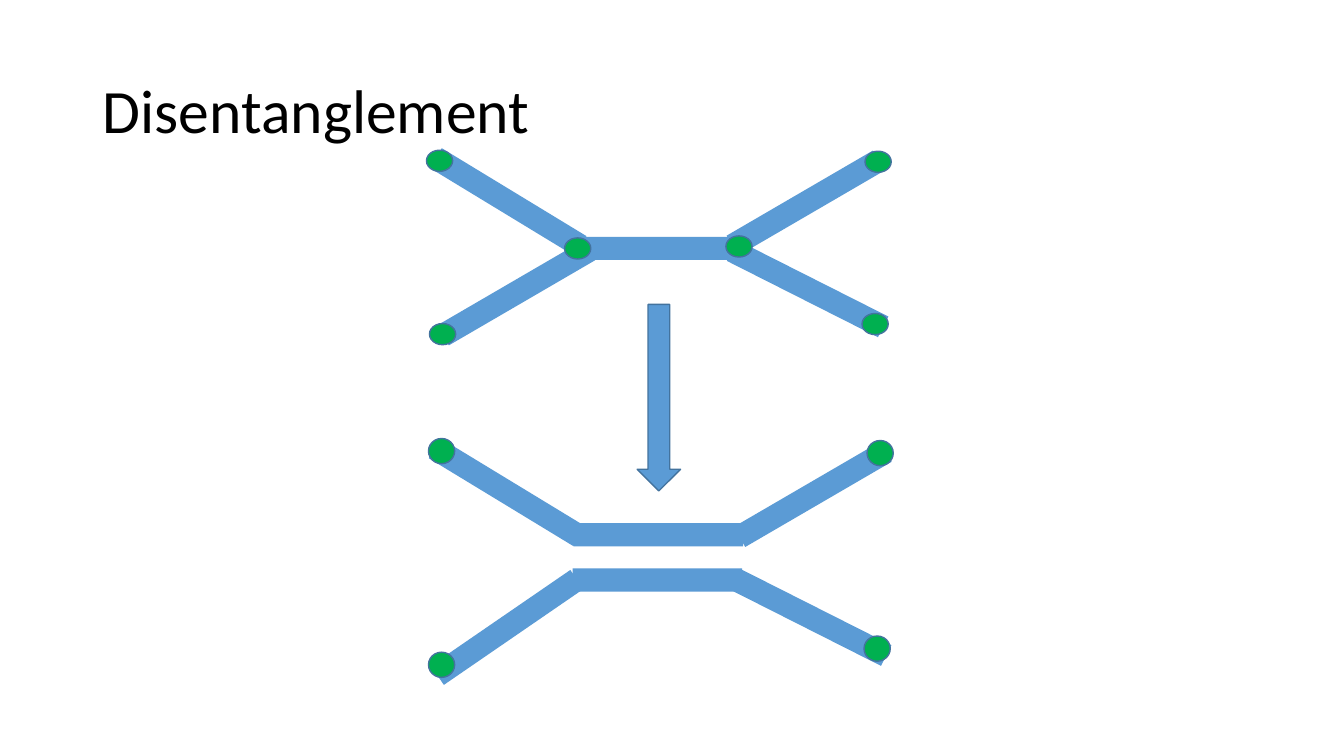
from pptx import Presentation
from pptx.dml.color import RGBColor
from pptx.enum.shapes import MSO_SHAPE
from pptx.enum.text import MSO_ANCHOR, PP_ALIGN
from pptx.util import Pt

PX = 9144  # EMU per px, 100 px to the inch
BLACK = RGBColor(0x00, 0x00, 0x00)
BLUE = RGBColor(0x5B, 0x9B, 0xD5)
GREEN = RGBColor(0x00, 0xB0, 0x50)
OUTLINE = RGBColor(0x43, 0x73, 0x9E)

BAR_W, BAR_H = 168, 23
NODE_W = 26
FLAT_NODE_H, ROUND_NODE_H = 21, 25

# Bars: left, top, rotation in degrees
ENTANGLED_BARS = [(570, 235, 0), (428, 279, 329.8), (717, 275, 26.8),
                  (420, 189, 31.3), (715, 190, 329.8)]
SEPARATE_BARS = [(569, 519, 0), (419, 611, 325.5), (720, 601, 26.8),
                 (419, 477, 31.3), (722, 479, 329.8), (568, 564, 0)]
# Nodes: left, top
JUNCTIONS = [(560, 236), (720, 234)]
ENTANGLED_ENDS = [(426, 321), (423, 149), (858, 150), (855, 311)]
SEPARATE_ENDS = [(425, 647), (425, 435), (860, 437), (857, 631)]


class Diagram:
    def __init__(self, prs):
        self.s = prs.slides.add_slide(prs.slide_layouts[5])

    def title(self, text, x, y, w, h):
        sp = self.s.shapes.title
        sp.left, sp.top, sp.width, sp.height = (v * PX for v in (x, y, w, h))
        tf = sp.text_frame
        tf.word_wrap = True
        tf.vertical_anchor = MSO_ANCHOR.MIDDLE
        p = tf.paragraphs[0]
        p.alignment = PP_ALIGN.LEFT
        p.line_spacing = 0.9
        r = p.add_run()
        r.text = text
        r.font.name = "Calibri"
        r.font.size = Pt(44)
        r.font.color.rgb = BLACK

    def shape(self, shapes, kind, x, y, w, h, fill, outlined=True):
        sp = shapes.add_shape(kind, x * PX, y * PX, w * PX, h * PX)
        sp.shadow.inherit = False
        sp.fill.solid()
        sp.fill.fore_color.rgb = fill
        if outlined:
            sp.line.color.rgb = OUTLINE
            sp.line.width = Pt(1)
        else:
            sp.line.fill.background()
        return sp

    def network(self, bars, nodes, node_h):
        """Group the bars with the nodes lying on top of them."""
        shapes = self.s.shapes.add_group_shape().shapes
        for x, y, angle in bars:
            sp = self.shape(shapes, MSO_SHAPE.RECTANGLE, x, y, BAR_W, BAR_H,
                            BLUE, outlined=False)
            sp.rotation = angle
        for x, y in nodes:
            self.shape(shapes, MSO_SHAPE.OVAL, x, y, NODE_W, node_h, GREEN)

    def down_arrow(self, x, y, w, h):
        self.shape(self.s.shapes, MSO_SHAPE.DOWN_ARROW, x, y, w, h, BLUE)


def main():
    prs = Presentation()
    prs.slide_width, prs.slide_height = 1333 * PX, 750 * PX
    diagram = Diagram(prs)
    diagram.title("Disentanglement", 92, 40, 1150, 145)
    diagram.network(ENTANGLED_BARS, JUNCTIONS, FLAT_NODE_H)
    diagram.down_arrow(632, 302, 43, 185)
    diagram.network([], ENTANGLED_ENDS, FLAT_NODE_H)
    diagram.network(SEPARATE_BARS, SEPARATE_ENDS, ROUND_NODE_H)
    prs.save("out.pptx")


if __name__ == "__main__":
    main()
